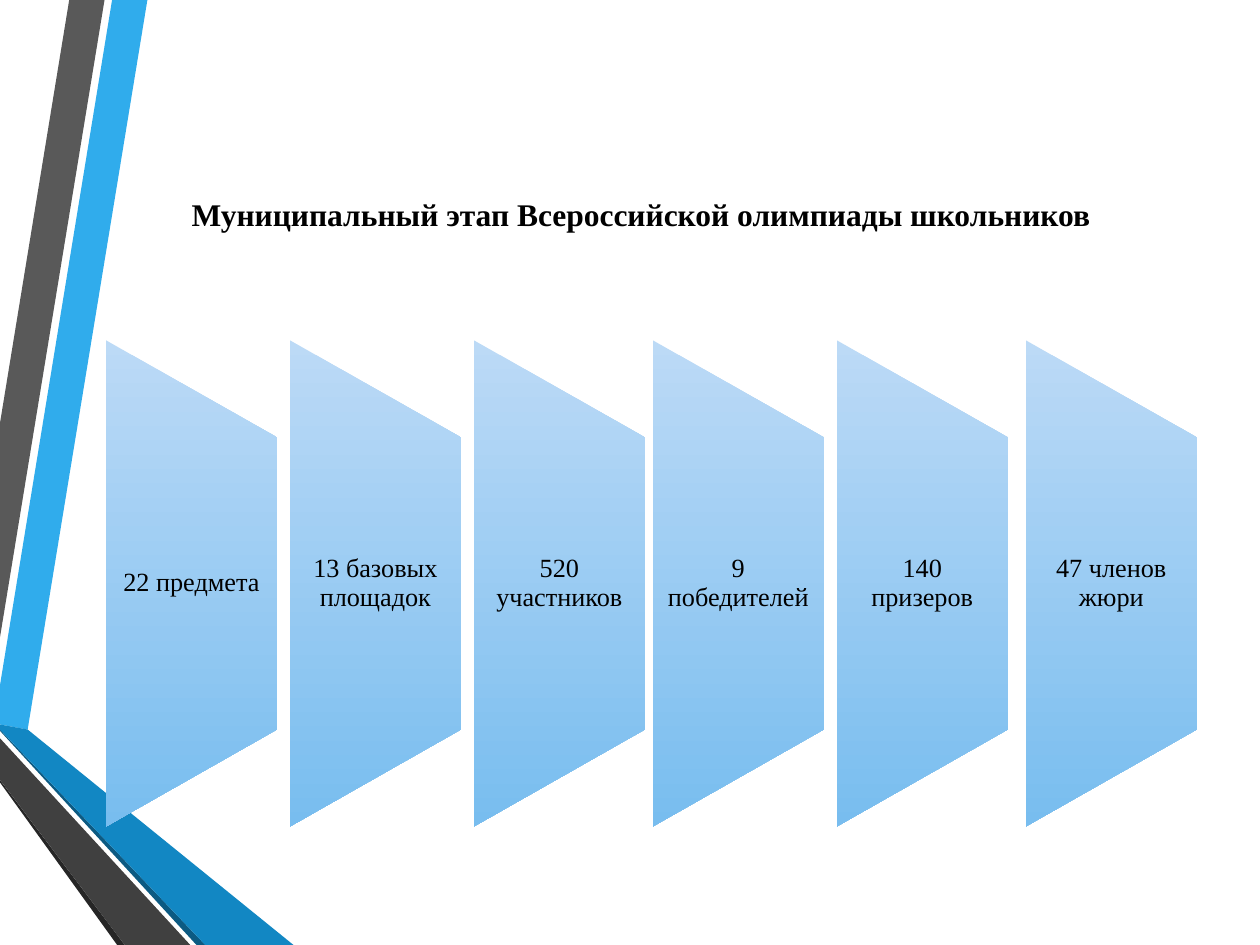
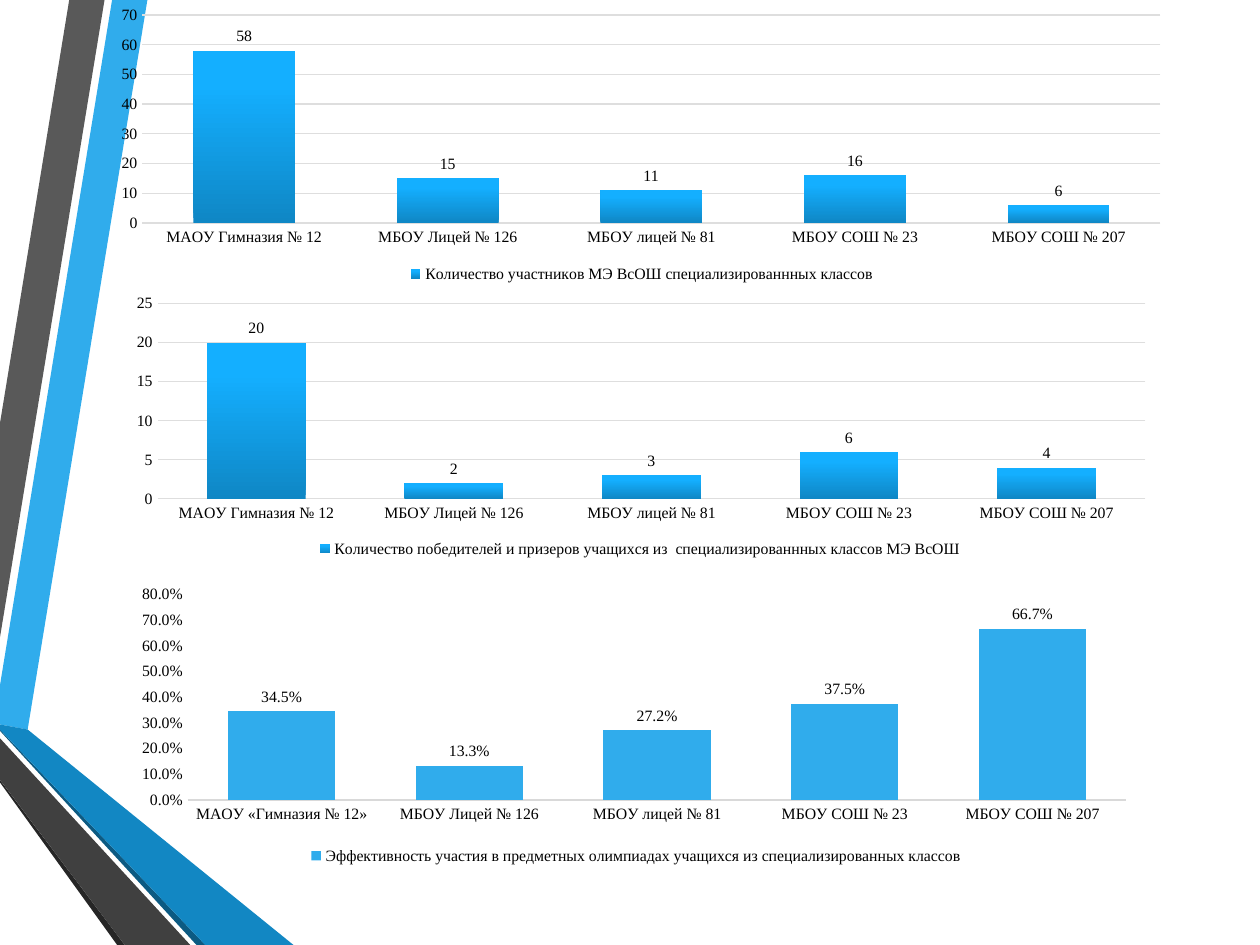
"""Build two slides on the municipal stage of the school olympiad."""
from dataclasses import dataclass

from lxml.etree import SubElement
from pptx import Presentation
from pptx.chart.data import CategoryChartData
from pptx.dml.color import RGBColor
from pptx.enum.chart import XL_CHART_TYPE, XL_LABEL_POSITION, XL_LEGEND_POSITION, XL_TICK_MARK
from pptx.enum.shapes import MSO_SHAPE
from pptx.enum.text import MSO_ANCHOR, MSO_AUTO_SIZE, PP_ALIGN
from pptx.oxml.ns import qn
from pptx.util import Pt

PX = 9144


@dataclass(frozen=True)
class Theme:
    font: str = "Times New Roman"
    title: int = 18
    body: int = 15
    chart: int = 9
    text: str = "000000"
    blue: str = "30ACEC"
    blue_mid: str = "1287C3"
    blue_dark: str = "0C5A82"
    gray: str = "595959"
    gray_mid: str = "404040"
    gray_dark: str = "262626"
    grid: str = "DEDEDE"
    axis: str = "D9D9D9"
    panel: tuple = ((0, "BCDAF6"), (1, "78BDEF"))
    bar: tuple = ((0, "0F87C5"), (0.8, "14AFFF"))


T = Theme()


def paint(fill, colour, angle=0):
    if isinstance(colour, str):
        fill.solid()
        fill.fore_color.rgb = RGBColor.from_string(colour)
        return
    fill.gradient()
    fill.gradient_angle = angle
    for stop, (position, rgb) in zip(fill.gradient_stops, colour):
        stop.position = position
        stop.color.rgb = RGBColor.from_string(rgb)


def set_font(font, size, bold=False):
    font.name = T.font
    font.size = Pt(size)
    font.bold = bold
    font.color.rgb = RGBColor.from_string(T.text)


prs = Presentation()
prs.slide_width, prs.slide_height = 1000 * PX, 750 * PX
s = prs.slides.add_slide(prs.slide_layouts[5])

BANDS = [
    (T.blue, [(0, 544), (0, 575), (22, 579), (117, 0), (89, 0)]),
    (T.gray, [(83, 0), (55, 0), (0, 336), (0, 506)]),
    (T.gray_dark, [(0, 619), (0, 621), (93, 750), (99, 750)]),
    (T.blue_dark, [(0, 579), (0, 580), (156, 750), (163, 750)]),
    (T.blue_mid, [(0, 579), (163, 750), (233, 750), (22, 579), (0, 575)]),
    (T.gray_mid, [(0, 619), (99, 750), (151, 750), (0, 586)]),
]
master_tree = prs.slide_master.shapes._spTree
for i, (colour, points) in enumerate(BANDS):
    builder = s.shapes.build_freeform(*points[0], scale=PX)
    builder.add_line_segments(points[1:], close=True)
    sp = builder.convert_to_shape()
    sp.name = f"Band {i + 1}"
    sp.shadow.inherit = False
    paint(sp.fill, colour)
    sp.line.fill.background()
    sp._element.nvSpPr.cNvPr.set("id", str(100 + i))
    master_tree.insert(2 + i, sp._element)

title = s.shapes.title
title.left, title.top, title.width, title.height = 142 * PX, 150 * PX, 782 * PX, 71 * PX
tf = title.text_frame
tf.text = "Муниципальный этап Всероссийской олимпиады школьников"
tf.auto_size = MSO_AUTO_SIZE.NONE
tf.vertical_anchor = MSO_ANCHOR.TOP
p = tf.paragraphs[0]
p.alignment = PP_ALIGN.LEFT
set_font(p.runs[0].font, T.title, bold=True)

PANEL_W, PANEL_H, PANEL_MID = 136, 386, 463
PANELS = [
    (84, "22 предмета"),
    (230, "13 базовых площадок"),
    (376, "520 участников"),
    (518, "9 победителей"),
    (664, "140 призеров"),
    (814, "47 членов жюри"),
]
for left, label in PANELS:
    sp = s.shapes.add_shape(
        MSO_SHAPE.FLOWCHART_MANUAL_OPERATION,
        (left + (PANEL_W - PANEL_H) // 2) * PX, (PANEL_MID - PANEL_W // 2) * PX,
        PANEL_H * PX, PANEL_W * PX)
    sp.rotation = 270
    sp.shadow.inherit = False
    paint(sp.fill, T.panel, angle=180)
    sp.line.fill.background()

    tb = s.shapes.add_textbox(left * PX, 347 * PX, PANEL_W * PX, 232 * PX)
    tf = tb.text_frame
    tf.word_wrap = True
    tf.vertical_anchor = MSO_ANCHOR.MIDDLE
    tf.margin_left = tf.margin_right = 10 * PX
    tf.margin_top = tf.margin_bottom = 0
    tf.text = label
    p = tf.paragraphs[0]
    p.alignment = PP_ALIGN.CENTER
    p.line_spacing = 0.9
    set_font(p.runs[0].font, T.body)

s = prs.slides.add_slide(prs.slide_layouts[6])
SCHOOLS = ["МБОУ Лицей № 126", "МБОУ лицей № 81", "МБОУ СОШ № 23", "МБОУ СОШ № 207"]
COUNTS = dict(first="МАОУ Гимназия № 12", fmt="0", fill=T.bar, axis=T.grid,
              grid=True, gap=100, overlap=-24)
CHARTS = [
    dict(COUNTS, name="Количество участников МЭ ВсОШ специализированнных классов",
         values=[58, 15, 11, 16, 6], top=70, step=10,
         frame=(79, 0, 859, 230), plot=(113, 12, 808, 165), legend=(322, 209)),
    dict(COUNTS, name="Количество победителей и призеров учащихся из  специализированнных классов МЭ ВсОШ",
         values=[20, 2, 3, 6, 4], top=25, step=5,
         frame=(92, 230, 834, 218), plot=(125, 241, 784, 155), legend=(250, 428)),
    dict(first="МАОУ «Гимназия № 12»", fmt="0.0%", fill=T.blue, axis=T.axis,
         grid=False, gap=75, overlap=0,
         name="Эффективность участия в предметных олимпиадах учащихся из специализированных классов",
         values=[0.345, 0.133, 0.272, 0.375, 0.667], top=0.8, step=0.1,
         frame=(96, 460, 814, 258), plot=(149, 472, 745, 163), legend=(243, 668)),
]
for spec_row in CHARTS:
    data = CategoryChartData(number_format=spec_row["fmt"])
    data.categories = [spec_row["first"], *SCHOOLS]
    data.add_series(spec_row["name"], spec_row["values"])
    x, y, w, h = spec_row["frame"]
    chart = s.shapes.add_chart(XL_CHART_TYPE.COLUMN_CLUSTERED,
                               x * PX, y * PX, w * PX, h * PX, data).chart
    set_font(chart.font, T.chart)
    chart.has_title = False
    chart.has_legend = True
    chart.legend.position = XL_LEGEND_POSITION.BOTTOM
    chart.legend.include_in_layout = False
    set_font(chart.legend.font, T.chart)

    plot = chart.plots[0]
    plot.vary_by_categories = False
    plot.gap_width = spec_row["gap"]
    plot.overlap = spec_row["overlap"]
    plot.has_data_labels = True
    labels = plot.data_labels
    labels.show_value = True
    labels.position = XL_LABEL_POSITION.OUTSIDE_END
    labels.number_format = spec_row["fmt"]
    labels.number_format_is_linked = False
    set_font(labels.font, T.chart)
    series = plot.series[0]
    series.invert_if_negative = False
    paint(series.format.fill, spec_row["fill"], angle=90)

    cat, val = chart.category_axis, chart.value_axis
    for axis in (cat, val):
        axis.major_tick_mark = axis.minor_tick_mark = XL_TICK_MARK.NONE
        set_font(axis.tick_labels.font, T.chart)
    paint(cat.format.line.fill, spec_row["axis"])
    cat.format.line.width = Pt(0.75)
    val.format.line.fill.background()
    val.minimum_scale, val.maximum_scale = 0, spec_row["top"]
    val.major_unit = spec_row["step"]
    val.tick_labels.number_format = spec_row["fmt"]
    val.tick_labels.number_format_is_linked = False
    val.has_major_gridlines = spec_row["grid"]
    if spec_row["grid"]:
        line = val.major_gridlines.format.line
        paint(line.fill, T.grid)
        line.width = Pt(0.75)

    plot_area = chart._chartSpace.chart.plotArea
    for parent, index, box in ((plot_area, 0, spec_row["plot"]),
                               (chart.legend._element, 1, spec_row["legend"])):
        for old in parent.findall(qn("c:layout")):
            parent.remove(old)
        layout = SubElement(parent, qn("c:layout"))
        parent.insert(index, layout)
        manual = SubElement(layout, qn("c:manualLayout"))
        settings = [("xMode", "edge"), ("yMode", "edge")]
        if parent is plot_area:
            settings.insert(0, ("layoutTarget", "inner"))
        shares = zip("xywh", box, (x, y, 0, 0), (w, h, w, h))
        settings += [(tag, f"{(v - start) / size:.4f}") for tag, v, start, size in shares]
        for tag, value in settings:
            SubElement(manual, qn(f"c:{tag}")).set("val", value)

prs.save("out.pptx")
